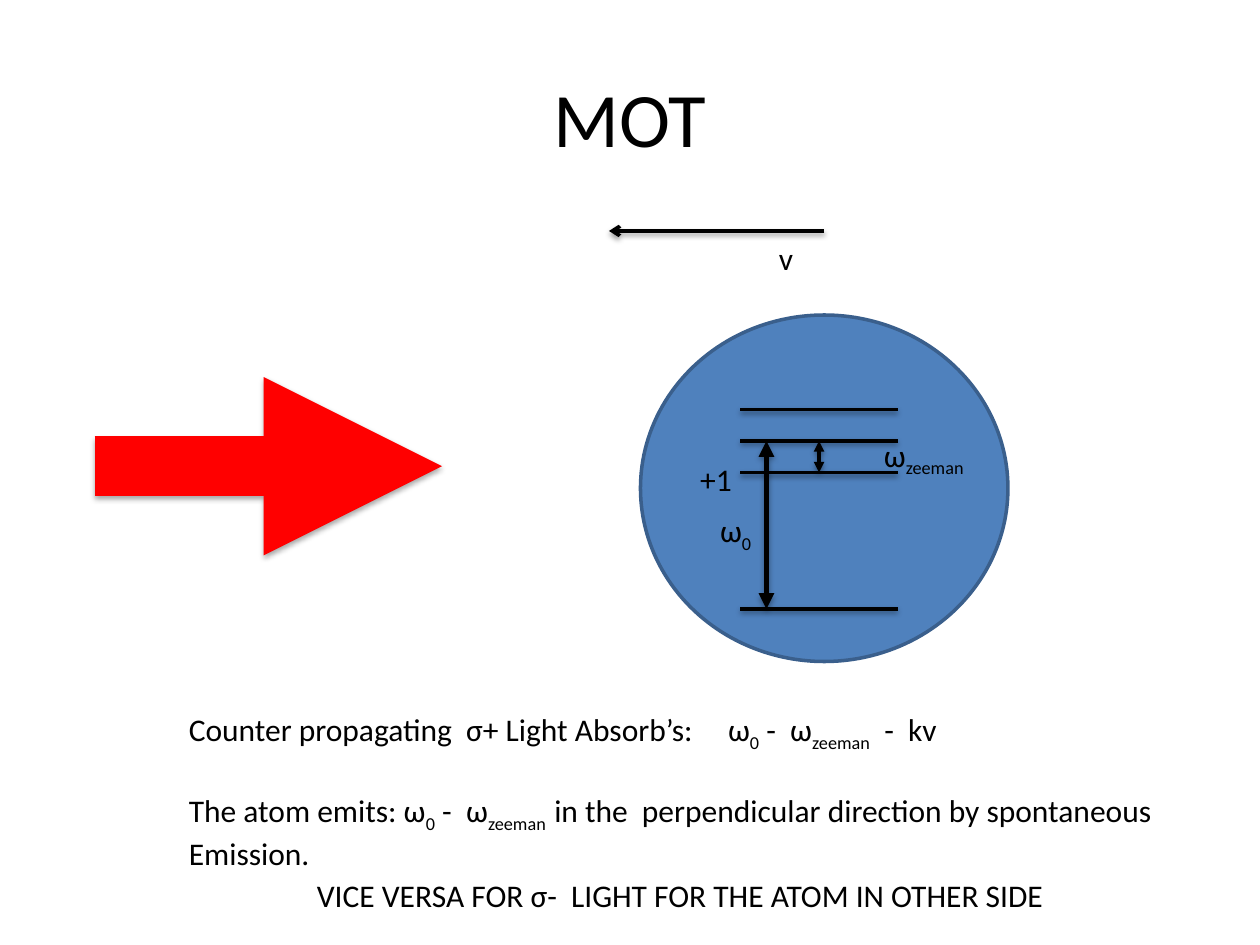
from lxml import etree
from pptx import Presentation
from pptx import util as u
from pptx.dml.color import RGBColor
from pptx.enum import shapes, text
from pptx.oxml import parse_xml
from pptx.oxml.ns import nsdecls, qn

BLACK = RGBColor(0x00, 0x00, 0x00)
RED = RGBColor(0xFF, 0x00, 0x00)
ATOM_FILL = RGBColor(0x4F, 0x81, 0xBD)
ATOM_EDGE = RGBColor(0x3A, 0x5F, 0x8C)
FONT = "Calibri"
COLUMNS, ROWS = 120, 90
LINE_HEIGHT = 4.8
LEVEL_LEFT, LEVEL_RIGHT = 70.5, 85.5
GROUND, LOWER, MIDDLE, UPPER = 58, 45, 42, 39


def grid(*cells):
    """Turn alternating column and row counts into lengths."""
    units = (u.Inches(10) / COLUMNS, u.Inches(7.5) / ROWS)
    return [u.Emu(round(cell * units[place % 2])) for place, cell in enumerate(cells)]


def add_text(page, content, at, size=18, align=text.PP_ALIGN.LEFT,
             anchor=text.MSO_ANCHOR.TOP, wrap=False, gaps=(), tab=None):
    """Add a text box, one paragraph a line, with subscripts between bars."""
    frame = page.shapes.add_textbox(*grid(*at)).text_frame
    frame.word_wrap = wrap
    frame.vertical_anchor = anchor
    for number, line in enumerate(content.split("\n")):
        para = frame.add_paragraph() if number else frame.paragraphs[0]
        para.alignment = align
        if number in gaps:
            para.space_before = u.Pt(22)
        if "\t" in line:
            stops = etree.SubElement(para._p.get_or_add_pPr(), qn("a:tabLst"))
            etree.SubElement(stops, qn("a:tab"), pos=str(u.Inches(tab)), algn="l")
        for place, piece in enumerate(line.split("|")):
            if piece:
                span = para.add_run()
                span.text = piece
                span.font.name, span.font.size = FONT, u.Pt(size)
                span.font.color.rgb = BLACK
                if place % 2:
                    span.font._element.set("baseline", "-25000")


def add_line(page, start, end, width=2, color=BLACK, head=None, tail=None):
    """Add a softly shadowed line with optional arrowheads."""
    line = page.shapes.add_connector(
        shapes.MSO_CONNECTOR.STRAIGHT, *grid(*start, *end))
    line.line.width = u.Pt(width)
    line.line.color.rgb = color
    outline = line.line._get_or_add_ln()
    for tag, kind in (("a:headEnd", head), ("a:tailEnd", tail)):
        if kind:
            etree.SubElement(outline, qn(tag), type=kind)
    distance, alpha = (1.6, 38) if width < 3 else (1.8, 35)
    line._element.spPr.append(parse_xml(
        f'<a:effectLst {nsdecls("a")}><a:outerShdw blurRad="{u.Pt(3.1)}" '
        f'dist="{u.Pt(distance)}" dir="5400000" rotWithShape="0">'
        f'<a:srgbClr val="{BLACK}"><a:alpha val="{alpha * 1000}"/></a:srgbClr>'
        f'</a:outerShdw></a:effectLst>'))


def add_atom(page):
    """Add the round atom behind the energy levels."""
    atom = page.shapes.add_shape(
        shapes.MSO_SHAPE.OVAL, *grid(61, 30, 35, 33))
    atom.shadow.inherit = False
    atom.fill.solid()
    atom.fill.fore_color.rgb = ATOM_FILL
    atom.line.color.rgb = ATOM_EDGE
    atom.line.width = u.Pt(2)


def add_label(page, content, left, top, width):
    """Add a one-line label."""
    add_text(page, content, (left, top, width, LINE_HEIGHT))


def main():
    """Build the slide and save it."""
    deck = Presentation()
    deck.slide_width, deck.slide_height = grid(COLUMNS, ROWS)
    page = deck.slides.add_slide(deck.slide_layouts[6])

    add_text(page, "MOT", (6, 3.6, 108, 15), size=44, wrap=True,
             align=text.PP_ALIGN.CENTER, anchor=text.MSO_ANCHOR.MIDDLE)
    add_atom(page)
    for level in (GROUND, LOWER, MIDDLE, UPPER):
        add_line(page, (LEVEL_LEFT, level), (LEVEL_RIGHT, level))
    for column, low, high, width in ((73, GROUND, MIDDLE, 3), (78, LOWER, MIDDLE, 2)):
        add_line(page, (column, low), (column, high), width,
                 head="triangle", tail="triangle")
    add_line(page, (9, 44.4), (42.1, 44.4), 34, RED, tail="triangle")
    add_line(page, (78.5, 22), (58, 22), tail="arrow")

    add_label(page, "+1", 65.5, 43.2, 5.5)
    add_label(page, "v", 73, 22.2, 3.8)
    add_label(page, "ω|0|", 67.4, 48.1, 5.5)
    add_label(page, "ω|zeeman|", 83, 40.9, 11.4)
    add_text(page,
             "Counter propagating  σ+ Light Absorb’s:\tω|0| -  ω|zeeman|  -  kv\n"
             "The atom emits: ω|0| -  ω|zeeman  |in the  perpendicular direction "
             "by spontaneous\nEmission.",
             (16.8, 67, 96.4, 15.7), wrap=True, gaps=(1,), tab=4.28)
    add_label(page, "VICE VERSA FOR σ-  LIGHT FOR THE ATOM IN OTHER SIDE",
              29, 82.8, 73)
    deck.save("out.pptx")


if __name__ == "__main__":
    main()
